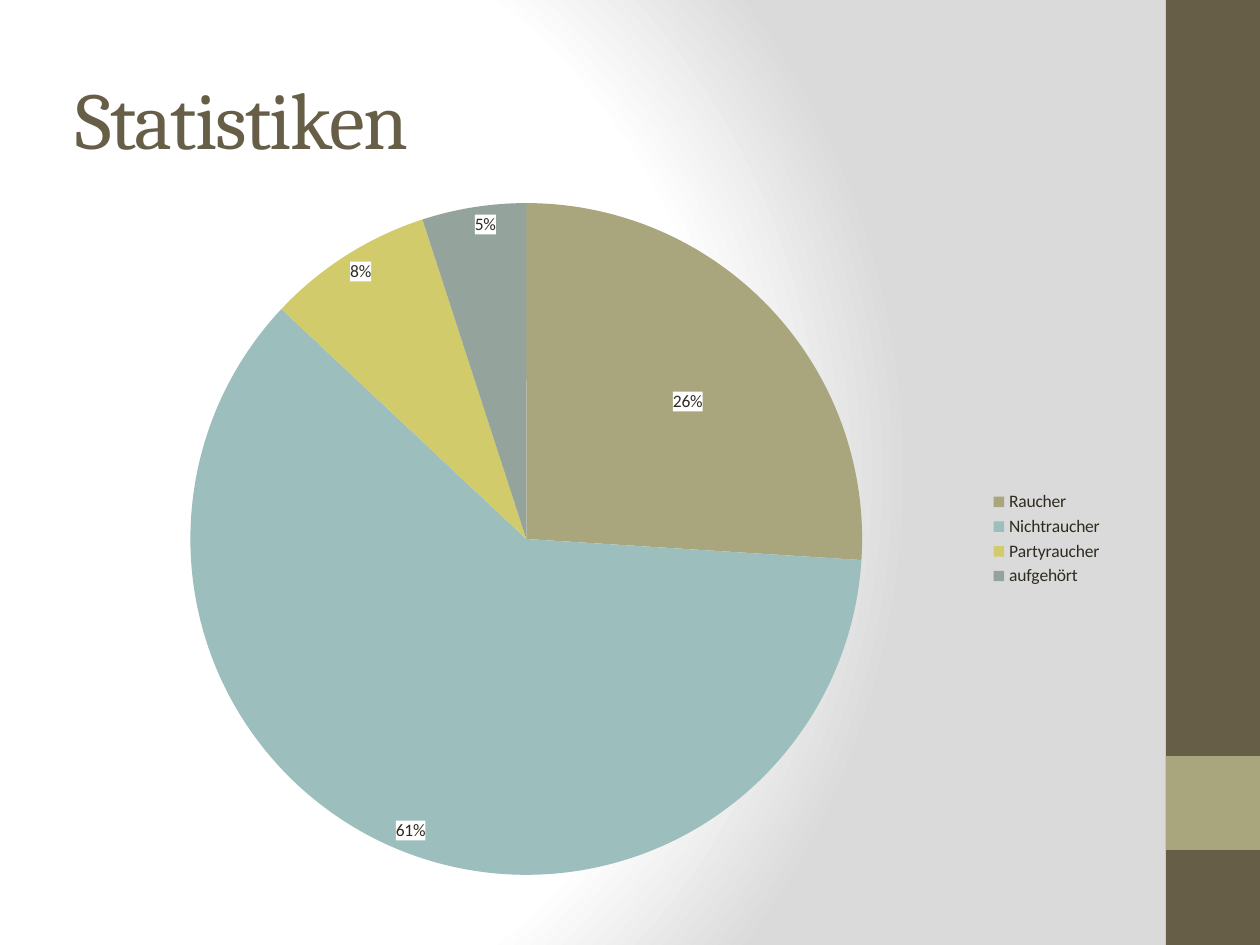
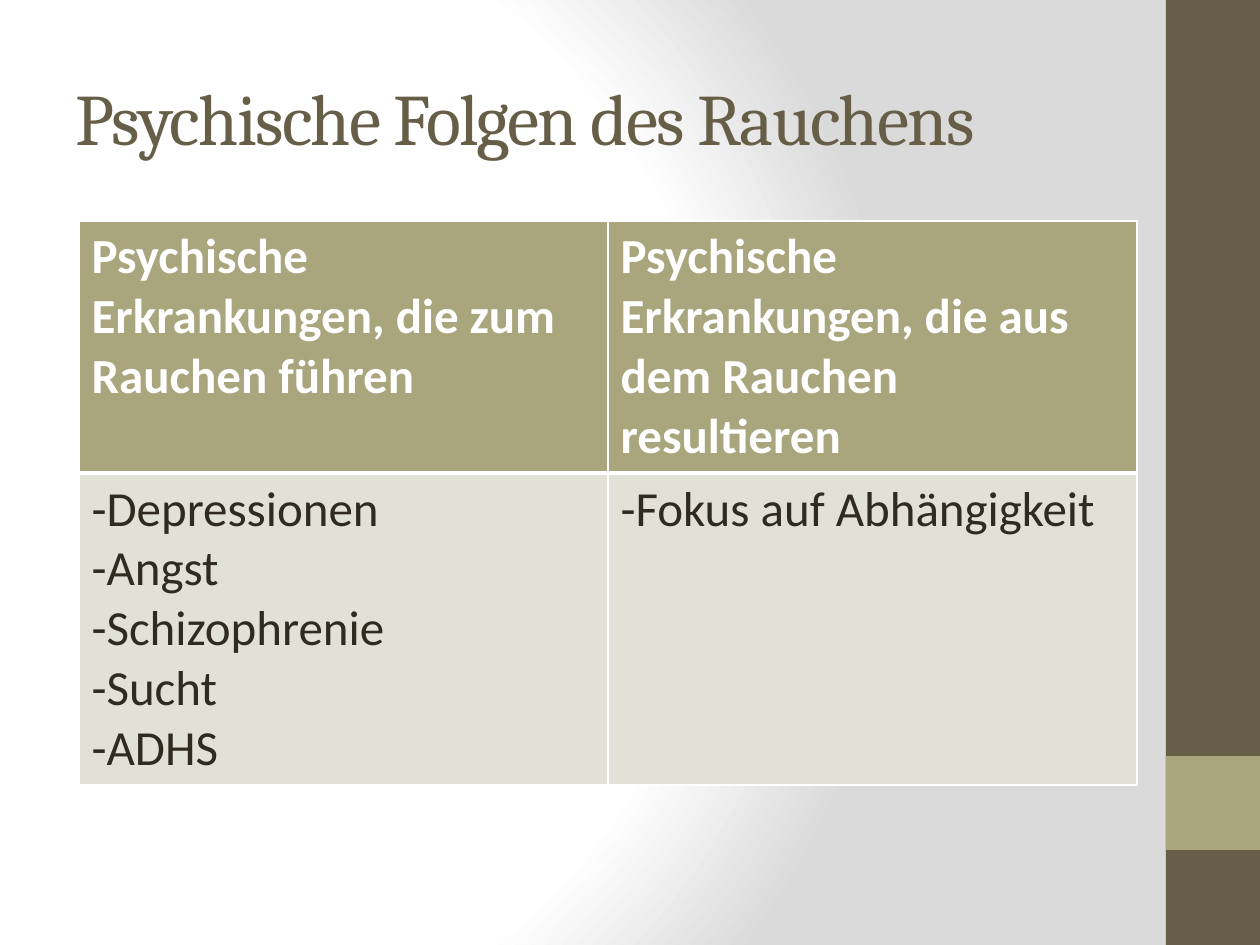
from pptx import Presentation
from pptx.chart.data import CategoryChartData
from pptx.dml.color import RGBColor
from pptx.enum.chart import XL_CHART_TYPE, XL_LABEL_POSITION, XL_LEGEND_POSITION
from pptx.enum.shapes import MSO_SHAPE
from pptx.enum.text import MSO_ANCHOR, MSO_AUTO_SIZE, PP_ALIGN
from pptx.oxml import parse_xml
from pptx.oxml.ns import nsdecls, qn
from pptx.util import Emu, Pt

# Content
STATS = "Statistiken"
SHARES = [
    ("Raucher", 26, "A9A57C"),
    ("Nichtraucher", 61, "9CBEBD"),
    ("Partyraucher", 8, "D2CB6C"),
    ("aufgehört", 5, "95A39D"),
]
EFFECTS = "Psychische Folgen des Rauchens"
COLUMNS = [
    ("Psychische Erkrankungen, die zum Rauchen führen",
     ["-Depressionen", "-Angst", "-Schizophrenie", "-Sucht", "-ADHS"]),
    ("Psychische Erkrankungen, die aus dem Rauchen resultieren",
     ["-Fokus auf Abhängigkeit"]),
]

# Theme
HEAD, BODY = "Cambria", "Calibri"
BROWN, OLIVE, PALE, INK, WHITE = "675E47", "A9A57C", "E2E1D7", "2F2B20", "FFFFFF"
GLOW = [(0, WHITE), (75, WHITE), (100, "DADADA")]

# Places in px: left, top, width, height
SIZE = (1260, 945)
BANDS = [((1166, 0, 94, 945), BROWN), ((1166, 756, 94, 94), OLIVE)]
TITLE = (63, 38, 1050, 158)
CHART = (63, 186, 1053, 706)
PIE = (190, 203, 672, 672)
NUDGE = (-61, 81)  # shift of the first label
TABLE = (79, 221, 1058, 418)


def px(n):
    return Emu(round(n * 914400 / 126))


def box(place):
    return [px(n) for n in place]


def tint(code):
    return RGBColor.from_string(code)


def paint(fill, code):
    fill.solid()
    fill.fore_color.rgb = tint(code)


def style(font, face, size, code, bold=False):
    font.name, font.size, font.bold = face, Pt(size), bold
    font.color.rgb = tint(code)


def dress(master, slide):
    """Give the master its glow and side bands."""
    master.background.fill.solid()
    old = master.element.find(".//" + qn("a:solidFill"))
    stops = "".join(
        f'<a:gs pos="{at * 1000}"><a:srgbClr val="{code}"/></a:gs>' for at, code in GLOW)
    old.getparent().replace(old, parse_xml(
        f'<a:gradFill {nsdecls("a")} rotWithShape="1"><a:gsLst>{stops}</a:gsLst>'
        '<a:path path="circle"><a:fillToRect l="20000" t="50000" r="100000" b="50000"/>'
        '</a:path></a:gradFill>'))
    for i, (place, code) in enumerate(BANDS):
        band = slide.shapes.add_shape(MSO_SHAPE.RECTANGLE, *box(place))
        band.name = f"Band {i + 1}"
        band.shadow.inherit = False
        paint(band.fill, code)
        band.line.fill.background()
        band.element.nvSpPr.cNvPr.set("id", str(20 + i))
        master.shapes.element.insert_element_before(band.element, "p:extLst")


def head(slide, text, size):
    title = slide.shapes.title
    title.left, title.top, title.width, title.height = box(TITLE)
    frame = title.text_frame
    frame.text = text
    frame.word_wrap = True
    frame.auto_size = MSO_AUTO_SIZE.NONE
    frame.vertical_anchor = MSO_ANCHOR.MIDDLE
    para = frame.paragraphs[0]
    para.alignment = PP_ALIGN.LEFT
    font = para.runs[0].font
    style(font, HEAD, size, BROWN)
    para.runs[0]._r.get_or_add_rPr().set("spc", "-100")


def draw_pie(slide):
    data = CategoryChartData()
    data.categories = [name for name, _, _ in SHARES]
    data.add_series("Series 1", [share for _, share, _ in SHARES])
    chart = slide.shapes.add_chart(XL_CHART_TYPE.PIE, *box(CHART), data).chart
    chart.has_title = False
    style(chart.font, BODY, 10, INK)
    chart.has_legend = True
    chart.legend.position = XL_LEGEND_POSITION.RIGHT
    chart.legend.include_in_layout = False
    plot = chart.plots[0]
    plot.vary_by_categories = True
    for i, (_, _, code) in enumerate(SHARES):
        paint(plot.series[0].points[i].format.fill, code)

    # Percent labels on white
    tags = plot.series[0].data_labels
    tags.show_percentage, tags.show_value = True, False
    tags.number_format, tags.number_format_is_linked = "0%", False
    style(tags.font, BODY, 10, INK)
    tags.position = XL_LABEL_POSITION.INSIDE_END
    white = (f'<c:spPr {nsdecls("c", "a")}><a:solidFill><a:srgbClr val="{WHITE}"/>'
             '</a:solidFill></c:spPr>')
    root = tags._element
    root.find(qn("c:txPr")).addprevious(parse_xml(white))
    dx, dy = (round(n / full, 2) for n, full in zip(NUDGE, CHART[2:]))
    shows = "".join(
        f'<c:show{key} val="{int(key == "Percent")}"/>'
        for key in ("LegendKey", "Val", "CatName", "SerName", "Percent", "BubbleSize"))
    root.insert(0, parse_xml(
        f'<c:dLbl {nsdecls("c")}><c:idx val="0"/><c:layout><c:manualLayout>'
        f'<c:x val="{dx}"/><c:y val="{dy}"/></c:manualLayout></c:layout>'
        f'{white}<c:dLblPos val="inEnd"/>{shows}</c:dLbl>'))

    # Fixed place of the pie
    area = chart._chartSpace.find(".//" + qn("c:plotArea"))
    for old in area.findall(qn("c:layout")):
        area.remove(old)
    x, y, w, h = PIE
    left, top, wide, high = CHART
    parts = zip("xywh", ((x - left) / wide, (y - top) / high, w / wide, h / high))
    spots = "".join(f'<c:{key} val="{val:.3f}"/>' for key, val in parts)
    area.insert(0, parse_xml(
        f'<c:layout {nsdecls("c")}><c:manualLayout><c:layoutTarget val="inner"/>'
        f'<c:xMode val="edge"/><c:yMode val="edge"/>{spots}</c:manualLayout></c:layout>'))


def edge(cell, **widths):
    """Draw white borders, named by side, with widths in points."""
    props = cell._tc.get_or_add_tcPr()
    for i, (side, width) in enumerate(widths.items()):
        props.insert(i, parse_xml(
            f'<a:ln{side} {nsdecls("a")} w="{Pt(width)}"><a:solidFill>'
            f'<a:srgbClr val="{WHITE}"/></a:solidFill></a:ln{side}>'))


def fill_cell(cell, lines, back, ink, bold):
    cell.text_frame.text = "\n".join(lines)
    for para in cell.text_frame.paragraphs:
        style(para.runs[0].font, BODY, 28, ink, bold)
    paint(cell.fill, back)


def draw_table(slide):
    table = slide.shapes.add_table(2, len(COLUMNS), *box(TABLE)).table
    for i, (top, items) in enumerate(COLUMNS):
        fill_cell(table.cell(0, i), [top], OLIVE, WHITE, True)
        fill_cell(table.cell(1, i), items, PALE, INK, False)
        edge(table.cell(0, i), L=1, R=1, T=1, B=3)
        edge(table.cell(1, i), L=1, R=1, T=3, B=1)


def main():
    deck = Presentation()
    deck.slide_width, deck.slide_height = box(SIZE)
    layout = deck.slide_layouts[5]
    first, second = (deck.slides.add_slide(layout) for _ in range(2))
    dress(deck.slide_master, first)
    head(first, STATS, 46)
    draw_pie(first)
    head(second, EFFECTS, 41.4)
    draw_table(second)
    deck.save("out.pptx")


if __name__ == "__main__":
    main()
